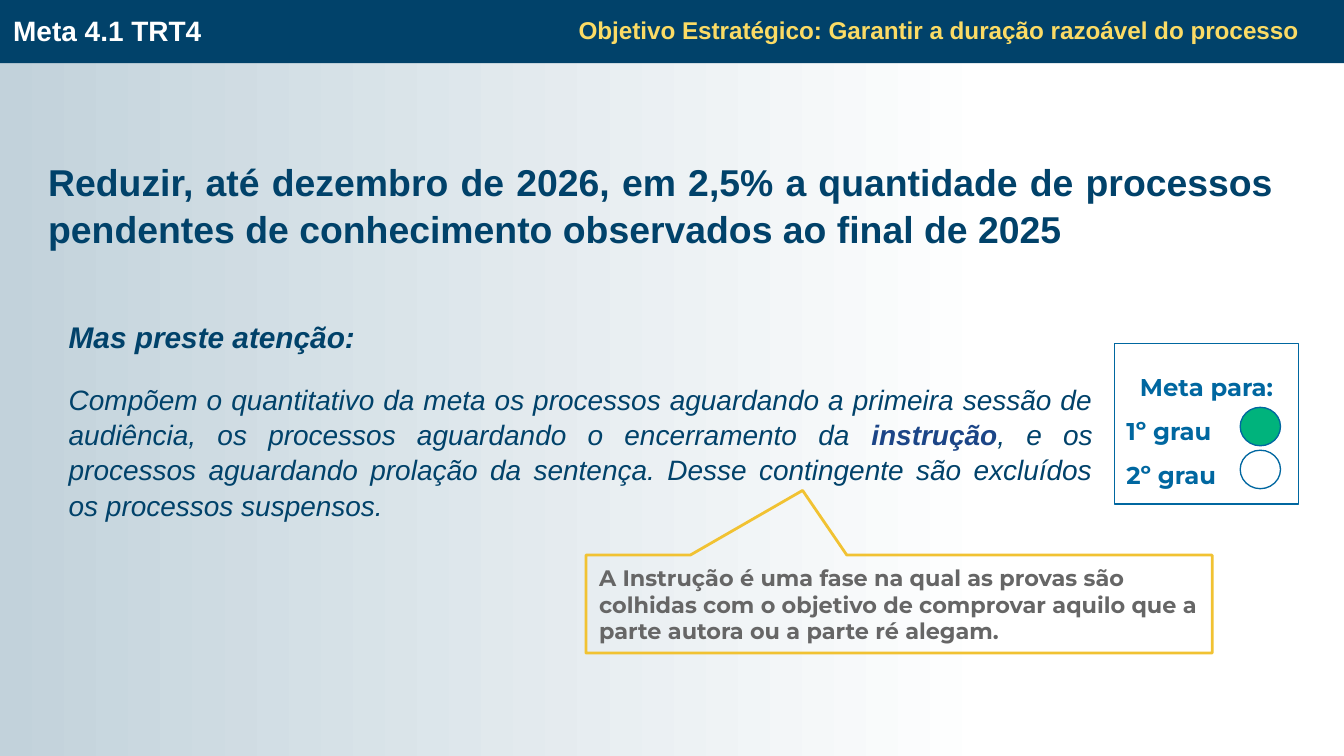
import pptx
import pptx.util
import pptx.dml.color
import pptx.enum.shapes
import pptx.enum.text

Pt = pptx.util.Pt
RGB = pptx.dml.color.RGBColor.from_string
Kind = pptx.enum.shapes.MSO_SHAPE
Side = pptx.enum.text.PP_ALIGN
Hold = pptx.enum.text.MSO_ANCHOR

hues = {
    "navy": "01426A", "mist": "C2D2DB", "white": "FFFFFF",
    "yellow": "FBDB65", "gold": "F1C232", "blue": "0067A0",
    "royal": "1C4587", "gray": "666666", "green": "00B37C",
}

deck = pptx.Presentation()
deck.slide_width, deck.slide_height = Pt(720), Pt(405)
slide = deck.slides.add_slide(deck.slide_layouts[6])


def draw(kind, box, fill=None, line=None, width=0.7):
    shape = slide.shapes.add_shape(kind, *[Pt(n) for n in box])
    shape.shadow.inherit = False
    if fill:
        shape.fill.solid()
        shape.fill.fore_color.rgb = RGB(hues[fill])
    else:
        shape.fill.background()
    if line:
        shape.line.color.rgb = RGB(hues[line])
        shape.line.width = Pt(width)
    else:
        shape.line.fill.background()
    return shape


def write(shape, paras, hold=Hold.MIDDLE, left=7.2, right=7.2):
    frame = shape.text_frame
    form = {"word_wrap": True, "vertical_anchor": hold,
            "margin_left": Pt(left), "margin_right": Pt(right),
            "margin_top": Pt(7.2), "margin_bottom": Pt(7.2)}
    for key, val in form.items():
        setattr(frame, key, val)
    for i, (form, runs) in enumerate(paras):
        para = frame.add_paragraph() if i else frame.paragraphs[0]
        for key, val in form.items():
            setattr(para, key, val)
        for text, hue, font in runs:
            run = para.add_run()
            run.text = text
            run.font.color.rgb = RGB(hues[hue])
            for key, val in font.items():
                setattr(run.font, key, val)


back = draw(Kind.RECTANGLE, (0, 0, 720, 405))
back.fill.gradient()
back.fill.gradient_angle = 0
for stop, hue, spot in zip(back.fill.gradient_stops, ("mist", "white"), (0, 0.74)):
    stop.color.rgb = RGB(hues[hue])
    stop.position = spot
draw(Kind.RECTANGLE, (0, -1.4, 720, 35.3), "navy")

bold = {"name": "Arial", "bold": True}
lean = {"name": "Arial", "italic": True, "size": Pt(15)}
mont = {"name": "Montserrat", "bold": True}
left = {"alignment": Side.LEFT}
full = {"alignment": Side.JUSTIFY, "line_spacing": 1.05}

texts = [
    ((0, 3.6, 292, 25.2), Hold.MIDDLE, 7.2, 7.2,
     [(left, [("Meta 4.1 TRT4", "white", {**bold, "size": Pt(15)})])]),
    ((18.7, 77, 671, 86.4), Hold.TOP, 7.2, 7.2,
     [(full, [("Reduzir, até dezembro de 2026, em 2,5% a quantidade de processos "
               "pendentes de conhecimento observados ao final de 2025",
               "navy", {**bold, "size": Pt(20)})])]),
    ((154, 0.7, 552, 31), Hold.MIDDLE, 7.2, 10.8,
     [({"alignment": Side.RIGHT},
       [("Objetivo Estratégico: Garantir a duração razoável do processo",
         "yellow", {**bold, "size": Pt(13)})])]),
    ((31, 162.7, 554.4, 120.2), Hold.TOP, 5.8, 0, [
        (full, [("Mas preste atenção:", "navy",
                 {**bold, "italic": True, "size": Pt(16)})]),
        ({**full, "space_before": Pt(14)}, [
            ("Compõem o quantitativo da meta os processos aguardando a primeira "
             "sessão de audiência, os processos aguardando o encerramento da ",
             "navy", lean),
            ("instrução", "royal", {**lean, "bold": True}),
            (", e os processos aguardando prolação da sentença. Desse contingente "
             "são excluídos os processos suspensos.", "navy", lean)])]),
]
for box, hold, lead, trail, paras in texts:
    label = slide.shapes.add_textbox(*[Pt(n) for n in box])
    write(label, paras, hold, lead, trail)

note = draw(Kind.RECTANGULAR_CALLOUT, (313.9, 297.4, 335.5, 52.5), None, "gold", 1.5)
note.adjustments[0] = -0.154
note.adjustments[1] = -1.16
write(note, [(left, [("A Instrução é uma fase na qual as provas são colhidas com o "
                      "objetivo de comprovar aquilo que a parte autora ou a parte ré "
                      "alegam.", "gray", {**mont, "size": Pt(12)})])])

goal = draw(Kind.RECTANGLE, (597, 184, 98.6, 86), "white", "blue")
lines = [("Meta para:", Side.CENTER), ("1º grau", Side.LEFT), ("2º grau", Side.LEFT)]
write(goal, [({"alignment": side, "line_spacing": 1.5},
              [(text, "blue", {**mont, "size": Pt(13)})]) for text, side in lines],
      left=6.5, right=6.5)
for i, hue in enumerate(("green", "white")):
    draw(Kind.OVAL, (664.4, 218.2 + 23 * i, 21.6, 20.6), hue, "blue")

deck.save("out.pptx")
